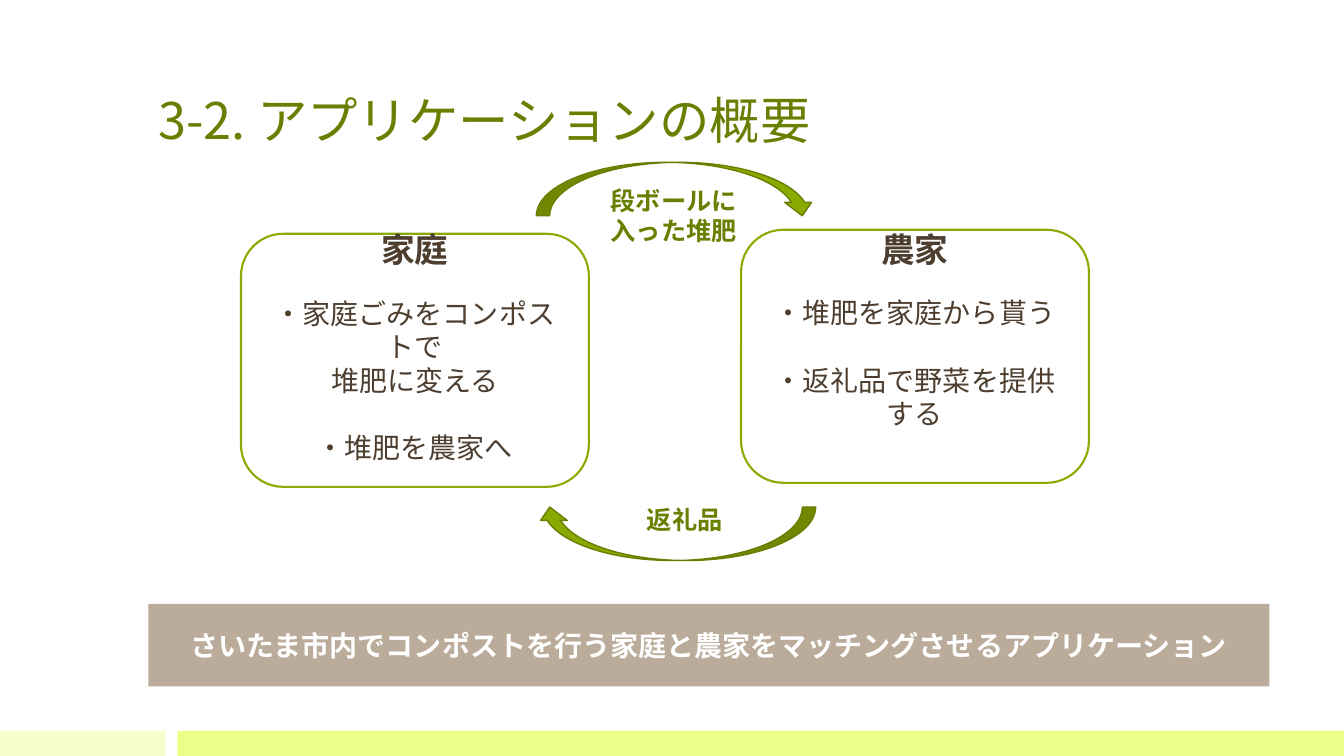
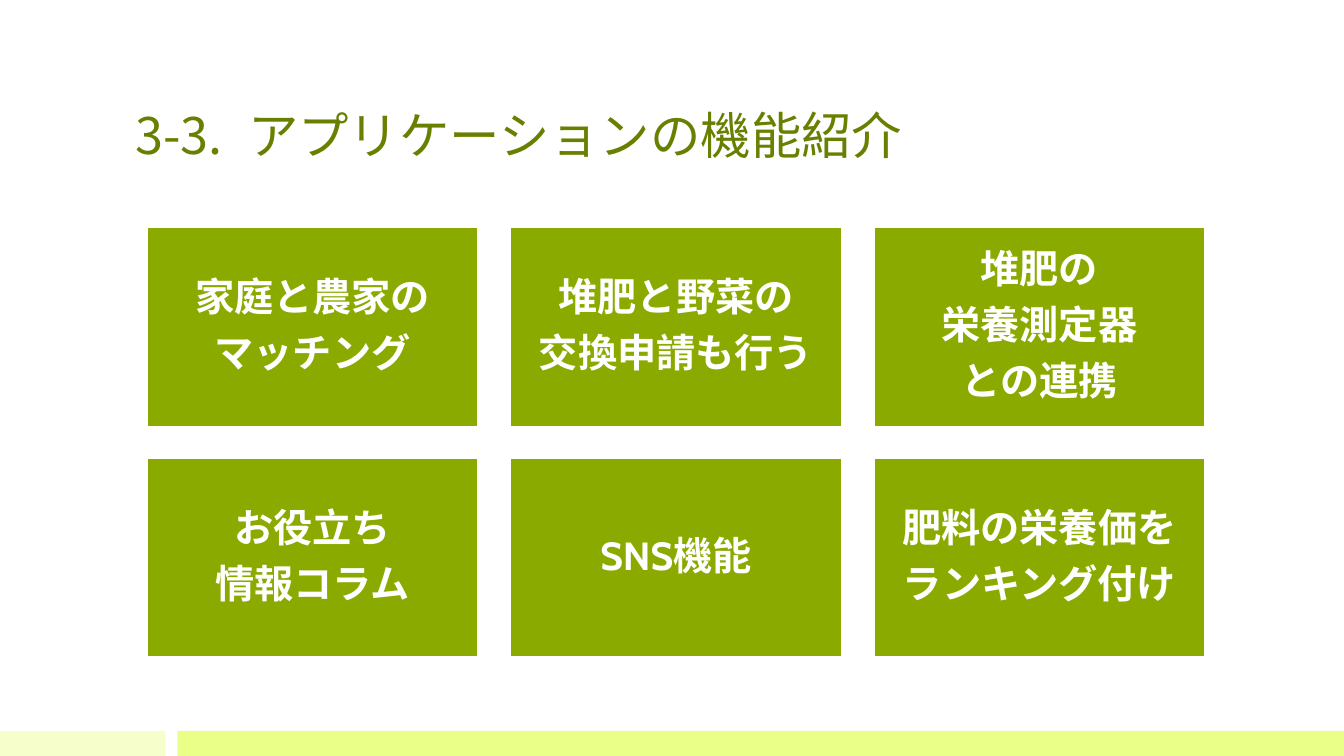
from dataclasses import dataclass
from itertools import product

from lxml.etree import SubElement
from pptx import Presentation
from pptx.dml.color import RGBColor as RGB
from pptx.enum.shapes import MSO_SHAPE as SHAPE
from pptx.enum.text import MSO_ANCHOR as ANCHOR, MSO_AUTO_SIZE as AUTO, PP_ALIGN as ALIGN
from pptx.oxml.ns import qn
from pptx.util import Inches, Pt

W, H = Inches(13.33), Inches(7.5)
LATIN, KANJI = "Cabin", "Noto Sans CJK JP"
COLORS = {
    "green": "8BAA00", "edge": "677E00", "heading": "688000", "text": "4D3E2F",
    "banner": "795837", "white": "FFFFFF", "pale": "F6FFCC", "lime": "E9FF88",
}


@dataclass(frozen=True)
class Box:
    """Place and size in percent of the slide."""
    x: float
    y: float
    w: float
    h: float

    def emu(self) -> tuple[int, int, int, int]:
        return tuple(round(v * side / 100) for v, side in
                     zip((self.x, self.y, self.w, self.h), (W, H, W, H)))


@dataclass(frozen=True)
class Style:
    size: float
    color: str
    bold: bool = True
    font: str = LATIN
    align: ALIGN = ALIGN.CENTER
    spacing: float | None = None
    after: float = 0


@dataclass(frozen=True)
class Line:
    text: str
    style: Style
    after: float | None = None


@dataclass(frozen=True)
class Card:
    box: Box
    bottom: float
    lines: tuple[Line, ...]


# Text styles
TITLE = Style(36, "heading", False, KANJI, ALIGN.LEFT, 0.9)
CARD_HEAD = Style(24, "text", after=19)
CARD_BODY = Style(20, "text", False, KANJI, spacing=Pt(24))
BANNER = Style(20, "white")
LABEL = Style(18, "heading")
LABEL_LEFT = Style(18, "heading", align=ALIGN.LEFT)
FEATURE = Style(28, "white", spacing=0.9, after=9.8)

# Shared bands along the bottom edge
BANDS = ((Box(0, 96.67, 12.3, 3.33), "pale"), (Box(13.2, 96.67, 86.8, 3.33), "lime"))

# Slide 1 content
CARDS = (
    Card(Box(17.93, 30.93, 25.88, 33.47), 0.27, (
        Line("家庭", CARD_HEAD), Line("・家庭ごみをコンポストで", CARD_BODY),
        Line("堆肥に変える", CARD_BODY, 24), Line("・堆肥を農家へ", CARD_BODY))),
    Card(Box(55.14, 30.4, 25.88, 33.47), 0.53, (
        Line("農家", CARD_HEAD), Line("・堆肥を家庭から貰う", CARD_BODY, 24),
        Line("・返礼品で野菜を提供する", CARD_BODY))),
)
ARROWS = ((Box(39.91, 21.47, 20.78, 7.07), 0), (Box(39.91, 67.07, 20.78, 7.07), 180))
LABELS = (
    (Box(44.71, 23.87, 12.38, 9.47), LABEL_LEFT, ("段ボールに", "入った堆肥"), ANCHOR.TOP),
    (Box(47.19, 65.47, 7.5, 6.53), LABEL, ("返礼品",), ANCHOR.MIDDLE),
)

# Slide 2 content, row by row
FEATURES = (
    ("家庭と農家の", "マッチング"), ("堆肥と野菜の", "交換申請も行う"),
    ("堆肥の", "栄養測定器", "との連携"), ("お役立ち", "情報コラム"),
    ("SNS機能",), ("肥料の栄養価を", "ランキング付け"),
)
FEATURE_COLS, FEATURE_ROWS = 3, 2
FEATURE_BOX, COL_STEP, ROW_STEP = Box(10.95, 30.13, 24.61, 26.27), 27.04, 30.53


def write(tf, lines, anchor: ANCHOR = ANCHOR.MIDDLE, **margins: float) -> None:
    """Fill a text frame; margins are in inches."""
    tf.word_wrap, tf.auto_size, tf.vertical_anchor = True, AUTO.NONE, anchor
    for side, inches in margins.items():
        setattr(tf, f"margin_{side}", Inches(inches))
    last = len(lines) - 1
    for i, line in enumerate(lines):
        st = line.style
        p = tf.add_paragraph() if i else tf.paragraphs[0]
        after = st.after if line.after is None else line.after
        for name, value in {"alignment": st.align, "line_spacing": st.spacing,
                            "space_before": Pt(0),
                            "space_after": Pt(after if i < last else 0)}.items():
            setattr(p, name, value)
        r = p.add_run()
        r.text = line.text
        for name, value in {"size": Pt(st.size), "bold": st.bold, "name": st.font}.items():
            setattr(r.font, name, value)
        r.font.color.rgb = RGB.from_string(COLORS[st.color])
        SubElement(r.font._element, qn("a:ea"), typeface=st.font)


def add_shape(slide, kind: SHAPE, box: Box, fill: str, line: str | None = None,
              width: float = 1):
    s = slide.shapes.add_shape(kind, *box.emu())
    s.shadow.inherit = False
    s.fill.solid()
    s.fill.fore_color.rgb = RGB.from_string(COLORS[fill])
    if line:
        s.line.color.rgb = RGB.from_string(COLORS[line])
        s.line.width = Pt(width)
    else:
        s.line.fill.background()
    return s


def add_slide(prs, title: str, box: Box, tab: float | None = None):
    slide = prs.slides.add_slide(prs.slide_layouts[5])
    s = slide.shapes.title
    s.left, s.top, s.width, s.height = box.emu()
    write(s.text_frame, [Line(title, TITLE)], ANCHOR.BOTTOM)
    if tab:
        tabs = SubElement(s.text_frame.paragraphs[0]._p.get_or_add_pPr(), qn("a:tabLst"))
        SubElement(tabs, qn("a:tab"), pos=str(Inches(tab)), algn="l")
    return slide


def move_bands_to_layout(slide) -> None:
    """Draw the bands and hand them to the layout that the slides share."""
    for i, (box, fill) in enumerate(BANDS):
        s = add_shape(slide, SHAPE.RECTANGLE, box, fill)
        s.element.nvSpPr.cNvPr.set("id", str(90 + i))
        slide.slide_layout.shapes.element.append(s.element)


def build_overview(prs) -> None:
    slide = add_slide(prs, "3-2. アプリケーションの概要", Box(11.03, 3.33, 76.89, 17.2))
    move_bands_to_layout(slide)
    # Household and farmer
    for card in CARDS:
        s = add_shape(slide, SHAPE.ROUNDED_RECTANGLE, card.box, "white", "green", 1.5)
        write(s.text_frame, card.lines, top=0, bottom=card.bottom)
    # Exchange cycle
    for box, angle in ARROWS:
        s = add_shape(slide, SHAPE.CURVED_DOWN_ARROW, box, "green", "edge")
        s.rotation = angle
    # Half-transparent summary
    s = add_shape(slide, SHAPE.RECTANGLE, Box(11.03, 79.87, 83.42, 10.93), "banner")
    color = s.element.spPr.find(qn("a:solidFill"))[0]
    SubElement(color, qn("a:alpha"), val="50000")
    write(s.text_frame, [Line(
        "さいたま市内でコンポストを行う家庭と農家をマッチングさせるアプリケーション", BANNER)])
    # Arrow labels
    for box, style, texts, anchor in LABELS:
        s = slide.shapes.add_textbox(*box.emu())
        write(s.text_frame, [Line(t, style) for t in texts], anchor)


def build_features(prs) -> None:
    slide = add_slide(prs, "3-3.\tアプリケーションの機能紹介", Box(9.3, 5.33, 76.89, 17.2), 1.12)
    first = FEATURE_BOX
    cells = product(range(FEATURE_ROWS), range(FEATURE_COLS))
    for (row, col), texts in zip(cells, FEATURES):
        box = Box(first.x + col * COL_STEP, first.y + row * ROW_STEP, first.w, first.h)
        s = add_shape(slide, SHAPE.RECTANGLE, box, "green", "white")
        write(s.text_frame, [Line(t, FEATURE) for t in texts],
              left=0.12, right=0.12, top=0.12, bottom=0.12)


def main() -> None:
    prs = Presentation()
    prs.slide_width, prs.slide_height = W, H
    build_overview(prs)
    build_features(prs)
    prs.save("out.pptx")


if __name__ == "__main__":
    main()
